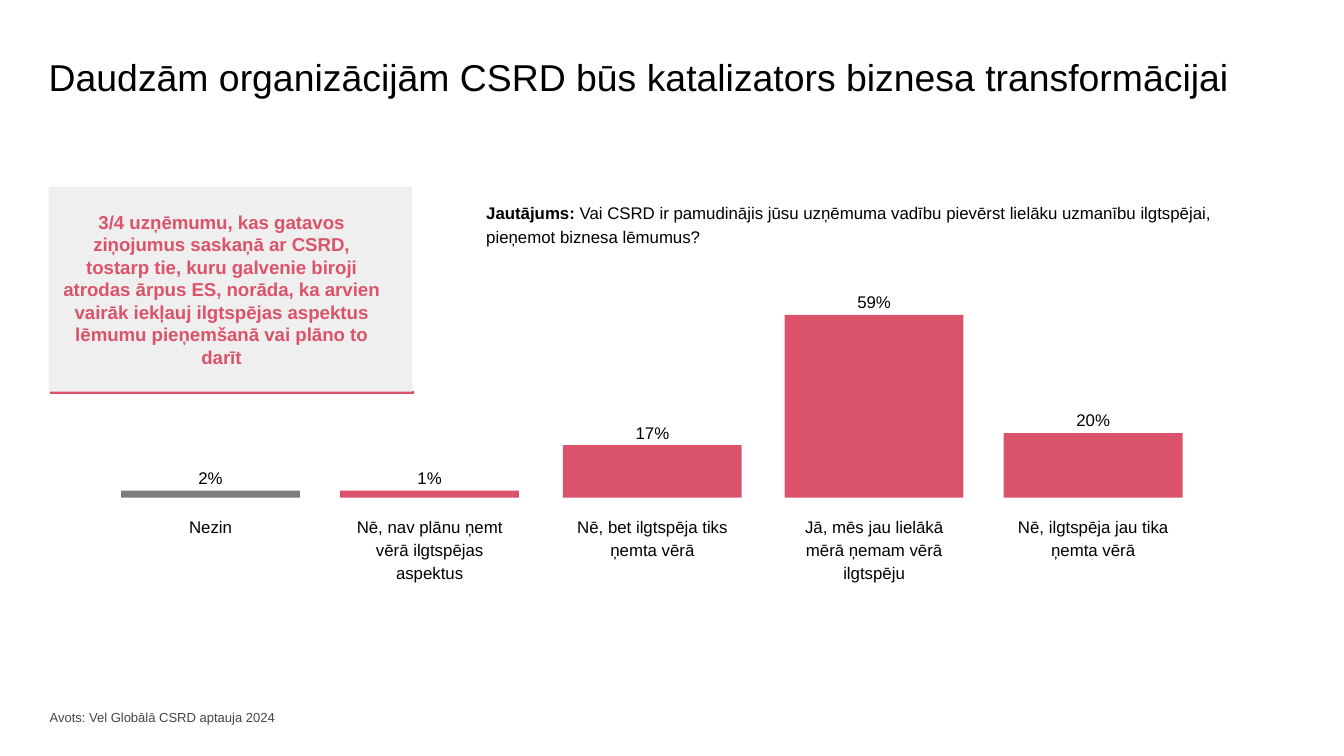
from lxml.etree import SubElement
from pptx import Presentation
from pptx.dml.color import RGBColor
from pptx.enum.shapes import MSO_CONNECTOR, MSO_SHAPE
from pptx.enum.text import MSO_ANCHOR, MSO_AUTO_SIZE, PP_ALIGN
from pptx.oxml.ns import qn
from pptx.util import Cm, Pt

FONT = "Arial"
BLACK = "000000"
ROSE = "DB536A"
GREY = "7D7D7D"
PALE = "EFEFEF"
DARK = "464646"
BASE = 9.4
WIDE = 3.38

BARS = [
    (2.29, 0.13, GREY, "2%", "Nezin"),
    (6.43, 0.13, ROSE, "1%", "Nē, nav plānu ņemt vērā ilgtspējas aspektus"),
    (10.64, 0.99, ROSE, "17%", "Nē, bet ilgtspēja tiks ņemta vērā"),
    (14.83, 3.45, ROSE, "59%", "Jā, mēs jau lielākā mērā ņemam vērā ilgtspēju"),
    (18.97, 1.22, ROSE, "20%", "Nē, ilgtspēja jau tika ņemta vērā"),
]


def paint(color, code):
    color.rgb = RGBColor.from_string(code)


def write(frame, runs, size, code=BLACK, align=PP_ALIGN.LEFT, space=1.15, inset=0.25):
    frame.word_wrap = True
    frame.auto_size = MSO_AUTO_SIZE.NONE
    frame.vertical_anchor = MSO_ANCHOR.TOP
    frame.margin_left = frame.margin_right = Cm(inset)
    frame.margin_top = frame.margin_bottom = Cm(inset)
    para = frame.paragraphs[0]
    para.alignment = align
    para.line_spacing = space
    for text, bold in runs:
        run = para.add_run()
        run.text = text
        run.font.name = FONT
        run.font.size = Pt(size)
        run.font.bold = bold
        paint(run.font.color, code)


def add_text(shapes, box, runs, size, **style):
    item = shapes.add_textbox(*map(Cm, box))
    write(item.text_frame, runs, size, **style)


def add_block(shapes, box, code):
    block = shapes.add_shape(MSO_SHAPE.RECTANGLE, *map(Cm, box))
    block.shadow.inherit = False
    block.fill.solid()
    paint(block.fill.fore_color, code)
    block.line.fill.background()


def add_line(shapes, ends, code, width):
    line = shapes.add_connector(MSO_CONNECTOR.STRAIGHT, *map(Cm, ends))
    paint(line.line.color, code)
    line.line.width = Pt(width)
    SubElement(line._element.spPr, qn("a:effectLst"))


def add_title(slide, text):
    title = slide.shapes.title
    title.left, title.top = Cm(0.92), Cm(0.89)
    title.width, title.height = Cm(23.55), Cm(1.93)
    write(title.text_frame, [(text, False)], 20, inset=0)


def add_bar(shapes, left, height, code, value, label):
    top = BASE - height
    add_block(shapes, (left, top, WIDE, height), code)
    mid = left + WIDE / 2
    add_text(shapes, (mid - 0.7, top - 0.74, 1.4, 0.71), [(value, False)], 9,
             align=PP_ALIGN.CENTER)
    add_text(shapes, (left, BASE + 0.05, WIDE, 0.71), [(label, False)], 9,
             align=PP_ALIGN.CENTER)


def add_callout(slide, text):
    shapes = slide.shapes.add_group_shape().shapes
    add_line(shapes, (0.94, 7.42, 7.82, 7.42), ROSE, 1.5)
    add_block(shapes, (0.92, 3.53, 6.87, 3.87), PALE)
    add_text(shapes, (0.92, 3.73, 6.53, 3.6), [(text, True)], 10, code=ROSE,
             align=PP_ALIGN.CENTER, space=1.0)


def main():
    deck = Presentation()
    deck.slide_width, deck.slide_height = Cm(25.4), Cm(14.28)
    slide = deck.slides.add_slide(deck.slide_layouts[5])
    shapes = slide.shapes
    add_title(slide, "Daudzām organizācijām CSRD būs katalizators biznesa transformācijai")
    add_text(shapes, (8.94, 3.53, 14.86, 1), [
        ("Jautājums: ", True),
        ("Vai CSRD ir pamudinājis jūsu uzņēmuma vadību pievērst lielāku uzmanību "
         "ilgtspējai, pieņemot biznesa lēmumus?", False),
    ], 9)
    add_text(shapes, (0.69, 13.1, 11.79, 0.99),
             [("Avots: Vel Globālā CSRD aptauja 2024", False)], 7, code=DARK)
    for bar in BARS:
        add_bar(shapes, *bar)
    add_callout(slide, "3/4 uzņēmumu, kas gatavos ziņojumus saskaņā ar CSRD, tostarp tie, "
                "kuru galvenie biroji atrodas ārpus ES, norāda, ka arvien vairāk iekļauj "
                "ilgtspējas aspektus lēmumu pieņemšanā vai plāno to darīt")
    deck.save("out.pptx")


if __name__ == "__main__":
    main()
